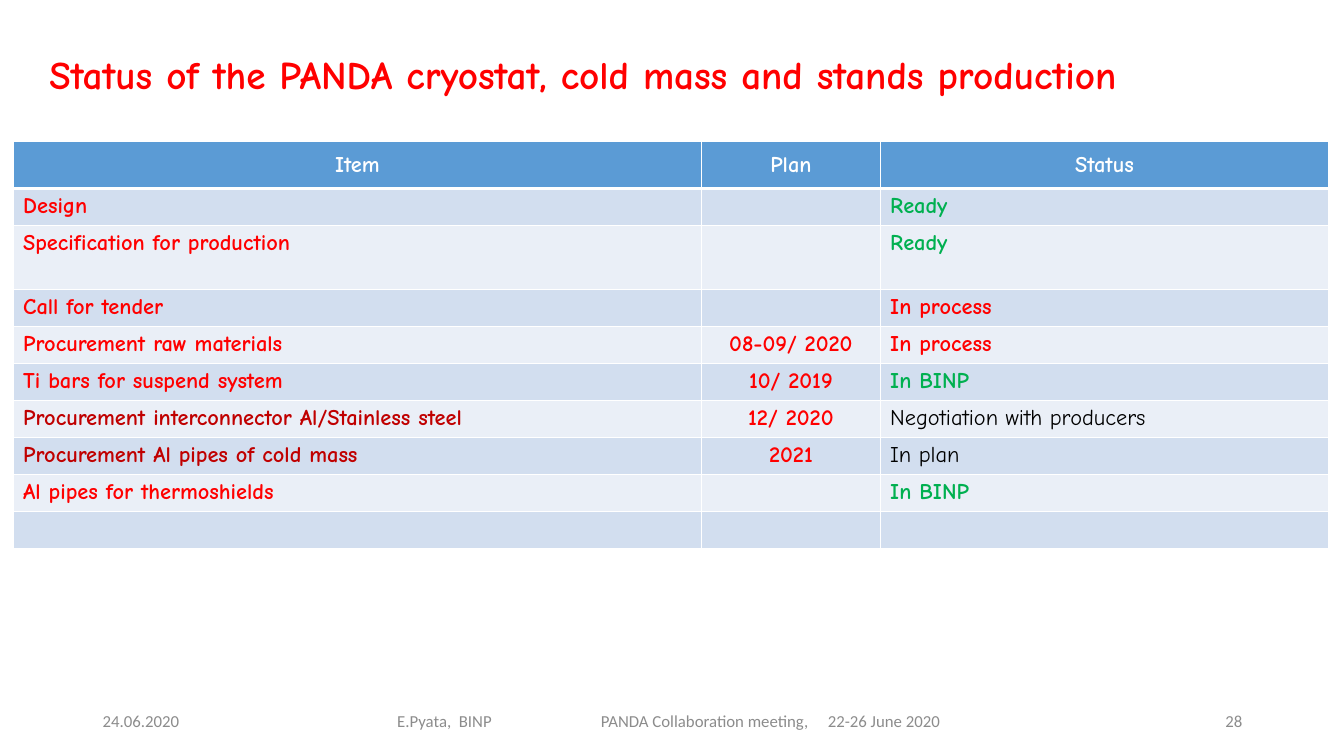
from lxml import etree
from pptx import Presentation
from pptx.dml.color import RGBColor
from pptx.enum.text import MSO_ANCHOR, MSO_AUTO_SIZE, PP_ALIGN
from pptx.oxml.ns import qn
from pptx.util import Inches, Pt

LEFT, MID, RIGHT = PP_ALIGN.LEFT, PP_ALIGN.CENTER, PP_ALIGN.RIGHT
TOP, CENTRE = MSO_ANCHOR.TOP, MSO_ANCHOR.MIDDLE
HAND, SANS = "Comic Neue", "Calibri"
HEX = {
    "red": "FF0000", "dark": "C00000", "green": "00B050", "black": "000000",
    "white": "FFFFFF", "grey": "8C8C8C", "head": "5B9BD5",
    "odd": "D2DEEF", "even": "EAEFF7",
}

# Content
TITLE = "Status of the PANDA cryostat, cold mass and stands production"
HEADS = ("Item", "Plan", "Status")
# item, item colour, plan, status, status colour
TASKS = [
    ("Design", "red", "", "Ready", "green"),
    ("Specification for production", "red", "", "Ready", "green"),
    ("Call for tender", "red", "", "In process", "red"),
    ("Procurement raw materials", "red", "08-09/ 2020", "In process", "red"),
    ("Ti bars for suspend system", "red", "10/ 2019", "In BINP", "green"),
    ("Procurement interconnector Al/Stainless steel", "dark", "12/ 2020",
     "Negotiation with producers", "black"),
    ("Procurement Al pipes of cold mass", "dark", "2021", "In plan", "black"),
    ("Al pipes for thermoshields", "red", "", "In BINP", "green"),
    ("", "red", "", "", "red"),
]
EVENT = "E.Pyata,  BINP\tPANDA Collaboration meeting,\t22-26 June 2020"
# text, left, width, left inset, alignment, tab stops
FOOT = [
    ("24.06.2020", 0.92, 3, 0.1, LEFT, ()),
    (EVENT, 2.57, 8.17, 1.37, LEFT, (2.02, 4.27)),
    ("28", 9.42, 3, 0.1, RIGHT, ()),
]

# Layout in inches
SIZE = (13.33, 7.5)
COLS = (6.83, 1.77, 4.45)
HEAD_H, ROW_H, TALL_H = 0.47, 0.367, 0.635
TALL_ROW = 2
FOOT_Y, FOOT_H = 6.95, 0.4


def style(para, face, size, color, bold=False, align=LEFT):
    para.alignment = align
    for run in para.runs:
        font = run.font
        font.name, font.size, font.bold = face, Pt(size), bold
        font.color.rgb = RGBColor.from_string(HEX[color])


def edge(cell, side, width):
    line = etree.SubElement(cell._tc.get_or_add_tcPr(), qn("a:" + side),
                            w=str(Pt(width)))
    fill = etree.SubElement(line, qn("a:solidFill"))
    etree.SubElement(fill, qn("a:srgbClr"), val=HEX["white"])


def paint(cell, text, fill, color, align, head=False):
    for side in ("lnL", "lnR", "lnT", "lnB"):
        thick = head and side == "lnB"
        edge(cell, side, 3 if thick else 1)
    cell.fill.solid()
    cell.fill.fore_color.rgb = RGBColor.from_string(HEX[fill])
    cell.vertical_anchor = CENTRE if head else TOP
    if text:
        cell.text_frame.text = text
        style(cell.text_frame.paragraphs[0], HAND, 16, color,
              color != "black", align)
    else:
        cell.margin_top = cell.margin_bottom = 0


def add_title(slide):
    box = slide.shapes.title
    box.left, box.top = Inches(0.39), Inches(0.45)
    box.width, box.height = Inches(12.63), Inches(0.57)
    frame = box.text_frame
    frame.text = TITLE
    frame.word_wrap = True
    frame.auto_size = MSO_AUTO_SIZE.NONE
    frame.vertical_anchor = TOP
    style(frame.paragraphs[0], HAND, 28, "red", True)


def add_tasks(slide):
    high = [HEAD_H] + [ROW_H] * len(TASKS)
    high[TALL_ROW] = TALL_H
    grid = slide.shapes.add_table(
        len(high), len(COLS), Inches(0.13), Inches(1.4),
        Inches(sum(COLS)), Inches(sum(high))).table
    for col, width in zip(grid.columns, COLS):
        col.width = Inches(width)
    for row, height in zip(grid.rows, high):
        row.height = Inches(height)
    for c, head in enumerate(HEADS):
        paint(grid.cell(0, c), head, "head", "white", MID, True)
    for r, (item, tone, plan, state, hue) in enumerate(TASKS, 1):
        fill = "odd" if r % 2 else "even"
        paint(grid.cell(r, 0), item, fill, tone, LEFT)
        paint(grid.cell(r, 1), plan, fill, "red", MID)
        paint(grid.cell(r, 2), state, fill, hue, LEFT)


def add_foot(slide):
    for text, left, width, inset, align, stops in FOOT:
        frame = slide.shapes.add_textbox(
            Inches(left), Inches(FOOT_Y), Inches(width),
            Inches(FOOT_H)).text_frame
        frame.word_wrap = True
        frame.margin_left = Inches(inset)
        frame.vertical_anchor = CENTRE
        frame.text = text
        para = frame.paragraphs[0]
        if stops:
            tabs = etree.SubElement(para._p.get_or_add_pPr(), qn("a:tabLst"))
            for stop in stops:
                etree.SubElement(tabs, qn("a:tab"), pos=str(Inches(stop)),
                                 algn="l")
        style(para, SANS, 12, "grey", align=align)


def main():
    deck = Presentation()
    deck.slide_width, deck.slide_height = map(Inches, SIZE)
    slide = deck.slides.add_slide(deck.slide_layouts[5])
    add_foot(slide)
    add_title(slide)
    add_tasks(slide)
    deck.save("out.pptx")


if __name__ == "__main__":
    main()
